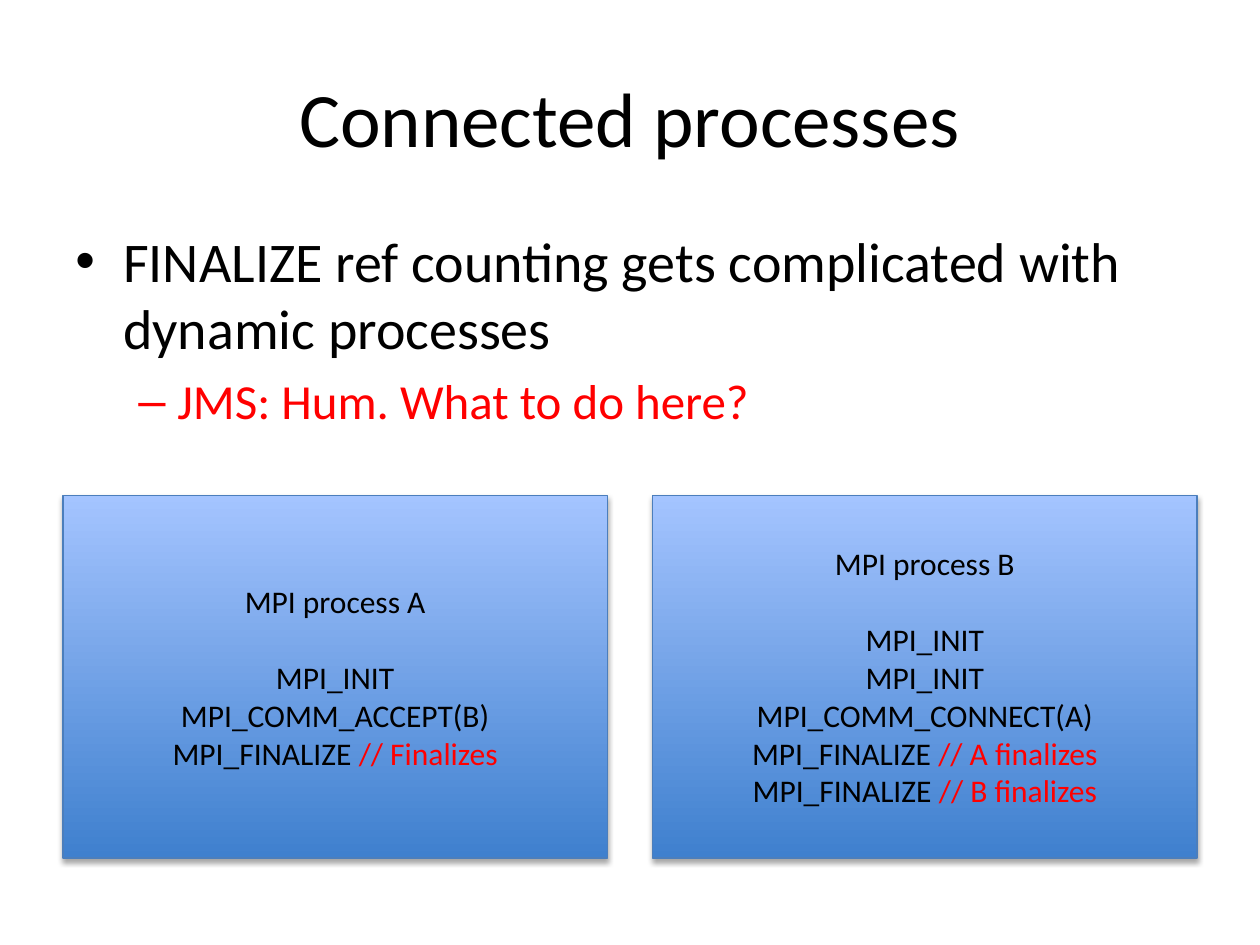
from lxml.etree import SubElement
from pptx import Presentation
from pptx.dml.color import RGBColor
from pptx.enum.shapes import MSO_SHAPE as Shape
from pptx.enum.text import MSO_ANCHOR as Anchor, PP_ALIGN as Align
from pptx.oxml.ns import qn
from pptx.util import Inches, Pt

COLORS = {"text": "000000", "note": "FF0000", "edge": "4B7EBC",
          "box_bottom": "3F80CE", "box_top": "A4C4FF", "shadow": "000000"}
FONT = "Calibri"

# Bullet levels: marker, text size, left margin and hanging indent in inches
LEVELS = [
    {"marker": "•", "size": 32, "margin": 0.38, "hang": 0.38},
    {"marker": "–", "size": 28, "margin": 0.81, "hang": 0.31},
]
BULLETS = [
    (0, "FINALIZE ref counting gets complicated with dynamic processes", "text"),
    (1, "JMS: Hum. What to do here?", "note"),
]
# Each process: heading, then calls with an optional comment
PROCESSES = [
    ("MPI process A", [("MPI_INIT", ""), ("MPI_COMM_ACCEPT(B)", ""),
                       ("MPI_FINALIZE ", "// Finalizes")]),
    ("MPI process B", [("MPI_INIT", ""), ("MPI_INIT", ""),
                       ("MPI_COMM_CONNECT(A)", ""),
                       ("MPI_FINALIZE ", "// A finalizes"),
                       ("MPI_FINALIZE ", "// B finalizes")]),
]


def rgb(name):
    return RGBColor.from_string(COLORS[name])


def add_run(paragraph, text, size, color="text"):
    run = paragraph.add_run()
    run.text = text
    run.font.name = FONT
    run.font.size = Pt(size)
    run.font.color.rgb = rgb(color)


def next_paragraph(frame, index):
    return frame.add_paragraph() if index else frame.paragraphs[0]


def add_text_frame(slide, box):
    frame = slide.shapes.add_textbox(*map(Inches, box)).text_frame
    frame.word_wrap = True
    return frame


def add_title(slide, box, text):
    frame = add_text_frame(slide, box)
    frame.vertical_anchor = Anchor.MIDDLE
    heading = frame.paragraphs[0]
    heading.alignment = Align.CENTER
    add_run(heading, text, 44)


def add_bullets(slide, box, bullets):
    frame = add_text_frame(slide, box)
    for index, (level, text, color) in enumerate(bullets):
        style = LEVELS[level]
        point = next_paragraph(frame, index)
        point.level = level
        point.space_before = Pt(0.2 * style["size"])
        add_run(point, text, style["size"], color)
        # Hanging indent and marker
        props = point._p.get_or_add_pPr()
        props.set("marL", str(Inches(style["margin"])))
        props.set("indent", str(-Inches(style["hang"])))
        SubElement(props, qn("a:buFont"), typeface="Arial")
        SubElement(props, qn("a:buChar"), char=style["marker"])


def add_soft_shadow(shape):
    shape.shadow.inherit = False
    effects = shape._element.spPr.find(qn("a:effectLst"))
    shadow = SubElement(effects, qn("a:outerShdw"), blurRad=str(Pt(3.1)),
                        dist=str(Pt(1.8)), dir="5400000", rotWithShape="0")
    color = SubElement(shadow, qn("a:srgbClr"), val=COLORS["shadow"])
    SubElement(color, qn("a:alpha"), val="35000")


def add_process(slide, box, heading, calls):
    panel = slide.shapes.add_shape(Shape.RECTANGLE, *map(Inches, box))
    panel.fill.gradient()
    panel.fill.gradient_angle = 90
    for stop, name in zip(panel.fill.gradient_stops, ("box_bottom", "box_top")):
        stop.color.rgb = rgb(name)
    panel.line.color.rgb = rgb("edge")
    panel.line.width = Pt(0.75)
    add_soft_shadow(panel)

    # Heading, a one-line gap, then the calls
    frame = panel.text_frame
    frame.word_wrap = True
    frame.vertical_anchor = Anchor.MIDDLE
    for index, (call, comment) in enumerate([(heading, "")] + calls):
        line = next_paragraph(frame, index)
        line.alignment = Align.CENTER
        if index == 1:
            line.space_before = Pt(22)
        add_run(line, call, 18)
        if comment:
            add_run(line, comment, 18, "note")


def add_process_row(slide, box, processes, gap=0.36):
    left, top, width, height = box
    panel_width = (width - gap * (len(processes) - 1)) / len(processes)
    for index, (heading, calls) in enumerate(processes):
        panel_left = left + index * (panel_width + gap)
        add_process(slide, (panel_left, top, panel_width, height), heading, calls)


def main():
    deck = Presentation()
    deck.slide_width, deck.slide_height = Inches(10), Inches(7.5)
    slide = deck.slides.add_slide(deck.slide_layouts[6])
    add_title(slide, (0.5, 0.3, 9, 1.25), "Connected processes")
    add_bullets(slide, (0.5, 1.75, 9, 4.95), BULLETS)
    add_process_row(slide, (0.5, 3.93, 9, 2.88), PROCESSES)
    deck.save("out.pptx")


if __name__ == "__main__":
    main()
